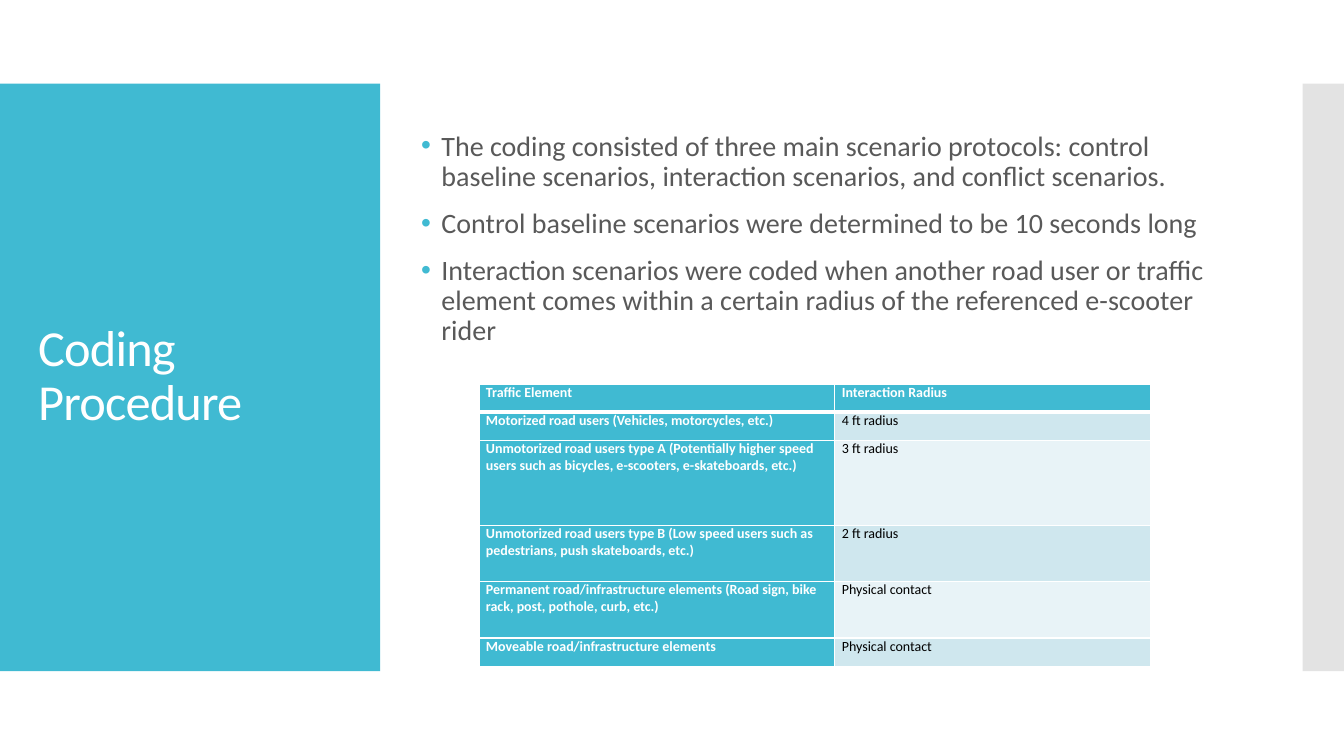
from dataclasses import dataclass

from lxml import etree
from pptx import Presentation
from pptx.dml.color import RGBColor
from pptx.enum.shapes import MSO_SHAPE
from pptx.enum.text import MSO_ANCHOR
from pptx.oxml.ns import qn
from pptx.util import Emu, Pt

RECTANGLE = MSO_SHAPE.RECTANGLE
MIDDLE = MSO_ANCHOR.MIDDLE

PX = 9144  # EMU per px, 100 px to the inch
FONT = "Calibri"
TEAL = RGBColor(0x40, 0xBA, 0xD2)
GREY = RGBColor(0xC8, 0xC8, 0xC8)
WHITE = RGBColor(0xFF, 0xFF, 0xFF)
BLACK = RGBColor(0x00, 0x00, 0x00)
BODY_GREY = RGBColor(0x59, 0x59, 0x59)
BANDS = (RGBColor(0xCF, 0xE7, 0xEE), RGBColor(0xE8, 0xF3, 0xF7))


def px(value: int) -> Emu:
    return Emu(value * PX)


@dataclass(frozen=True)
class Box:
    left: int
    top: int
    width: int
    height: int

    def emu(self) -> tuple[Emu, Emu, Emu, Emu]:
        return px(self.left), px(self.top), px(self.width), px(self.height)


@dataclass(frozen=True)
class Panel:
    box: Box
    color: RGBColor
    opacity: int  # percent


@dataclass(frozen=True)
class RadiusRow:
    element: str
    radius: str
    height: int


PANELS = (
    Panel(Box(0, 83, 377, 583), TEAL, 100),
    Panel(Box(1292, 83, 41, 583), GREY, 50),
)
TITLE_BOX = Box(28, 123, 322, 503)
BODY_BOX = Box(408, 0, 800, 475)
TABLE_BOX = Box(475, 381, 666, 280)
COLUMN_WIDTHS = (353, 313)

PROTOCOLS = (
    "The coding consisted of three main scenario protocols: control baseline "
    "scenarios, interaction scenarios, and conflict scenarios.",
    "Control baseline scenarios were determined to be 10 seconds long",
    "Interaction scenarios were coded when another road user or traffic element "
    "comes within a certain radius of the referenced e-scooter rider",
)
RADIUS_ROWS = (
    RadiusRow("Traffic Element", "Interaction Radius", 28),
    RadiusRow("Motorized road users (Vehicles, motorcycles, etc.)", "4 ft radius", 28),
    RadiusRow("Unmotorized road users type A (Potentially higher speed users such as "
              "bicycles, e-scooters, e-skateboards, etc.)", "3 ft radius", 84),
    RadiusRow("Unmotorized road users type B (Low speed users such as pedestrians, "
              "push skateboards, etc.)", "2 ft radius", 56),
    RadiusRow("Permanent road/infrastructure elements (Road sign, bike rack, post, "
              "pothole, curb, etc.)", "Physical contact", 56),
    RadiusRow("Moveable road/infrastructure elements", "Physical contact", 28),
)


def add_run(paragraph, text: str, size: int, color: RGBColor, bold: bool = False):
    run = paragraph.add_run()
    run.text = text
    run.font.name = FONT
    run.font.size = Pt(size)
    run.font.bold = bold
    run.font.color.rgb = color
    return run


def add_panel(slide, panel: Panel) -> None:
    shape = slide.shapes.add_shape(RECTANGLE, *panel.box.emu())
    shape.shadow.inherit = False
    shape.line.fill.background()
    shape.fill.solid()
    shape.fill.fore_color.rgb = panel.color
    if panel.opacity < 100:
        color = shape.fill._xPr.find(".//" + qn("a:srgbClr"))
        etree.SubElement(color, qn("a:alpha"), val=str(panel.opacity * 1000))


def add_text_frame(slide, box: Box):
    frame = slide.shapes.add_textbox(*box.emu()).text_frame
    frame.word_wrap = True
    frame.vertical_anchor = MIDDLE
    return frame


def add_title(slide) -> None:
    paragraph = add_text_frame(slide, TITLE_BOX).paragraphs[0]
    paragraph.line_spacing = 0.9
    run = add_run(paragraph, "Coding Procedure", 36, WHITE)
    run.font._element.set("spc", "-60")


def add_bullets(slide) -> None:
    frame = add_text_frame(slide, BODY_BOX)
    for index, protocol in enumerate(PROTOCOLS):
        paragraph = frame.add_paragraph() if index else frame.paragraphs[0]
        paragraph.line_spacing = 0.9
        paragraph.space_before = Pt(12)
        properties = paragraph._p.get_or_add_pPr()
        properties.set("marL", str(px(20)))
        properties.set("indent", str(-px(20)))
        bullet_color = etree.SubElement(properties, qn("a:buClr"))
        etree.SubElement(bullet_color, qn("a:srgbClr"), val=str(TEAL))
        etree.SubElement(properties, qn("a:buFont"), typeface="Arial")
        etree.SubElement(properties, qn("a:buChar"), char="•")
        add_run(paragraph, protocol, 20, BODY_GREY)


def set_borders(cell, top: int, bottom: int) -> None:
    properties = cell._tc.get_or_add_tcPr()
    for side, points in (("L", 1), ("R", 1), ("T", top), ("B", bottom)):
        line = etree.SubElement(properties, qn(f"a:ln{side}"), w=str(Pt(points)))
        fill = etree.SubElement(line, qn("a:solidFill"))
        etree.SubElement(fill, qn("a:srgbClr"), val=str(WHITE))


def add_radius_table(slide) -> None:
    table = slide.shapes.add_table(
        len(RADIUS_ROWS), len(COLUMN_WIDTHS), *TABLE_BOX.emu()).table
    for column, width in zip(table.columns, COLUMN_WIDTHS):
        column.width = px(width)
    for row_index, row in enumerate(RADIUS_ROWS):
        table.rows[row_index].height = px(row.height)
        for column_index, text in enumerate((row.element, row.radius)):
            cell = table.cell(row_index, column_index)
            cell.margin_left = cell.margin_right = px(7)
            cell.margin_top = cell.margin_bottom = 0
            # The rule under the header is thicker than the rest
            set_borders(cell, top=3 if row_index == 1 else 1,
                        bottom=3 if row_index == 0 else 1)
            heading = row_index == 0 or column_index == 0
            cell.fill.solid()
            cell.fill.fore_color.rgb = TEAL if heading else BANDS[(row_index - 1) % 2]
            add_run(cell.text_frame.paragraphs[0], text, 10,
                    WHITE if heading else BLACK, bold=heading)


def main() -> None:
    presentation = Presentation()
    presentation.slide_width, presentation.slide_height = px(1333), px(750)
    slide = presentation.slides.add_slide(presentation.slide_layouts[6])

    # Side panels
    for panel in PANELS:
        add_panel(slide, panel)
    # Title, bullets and table
    add_title(slide)
    add_bullets(slide)
    add_radius_table(slide)

    presentation.save("out.pptx")


if __name__ == "__main__":
    main()
